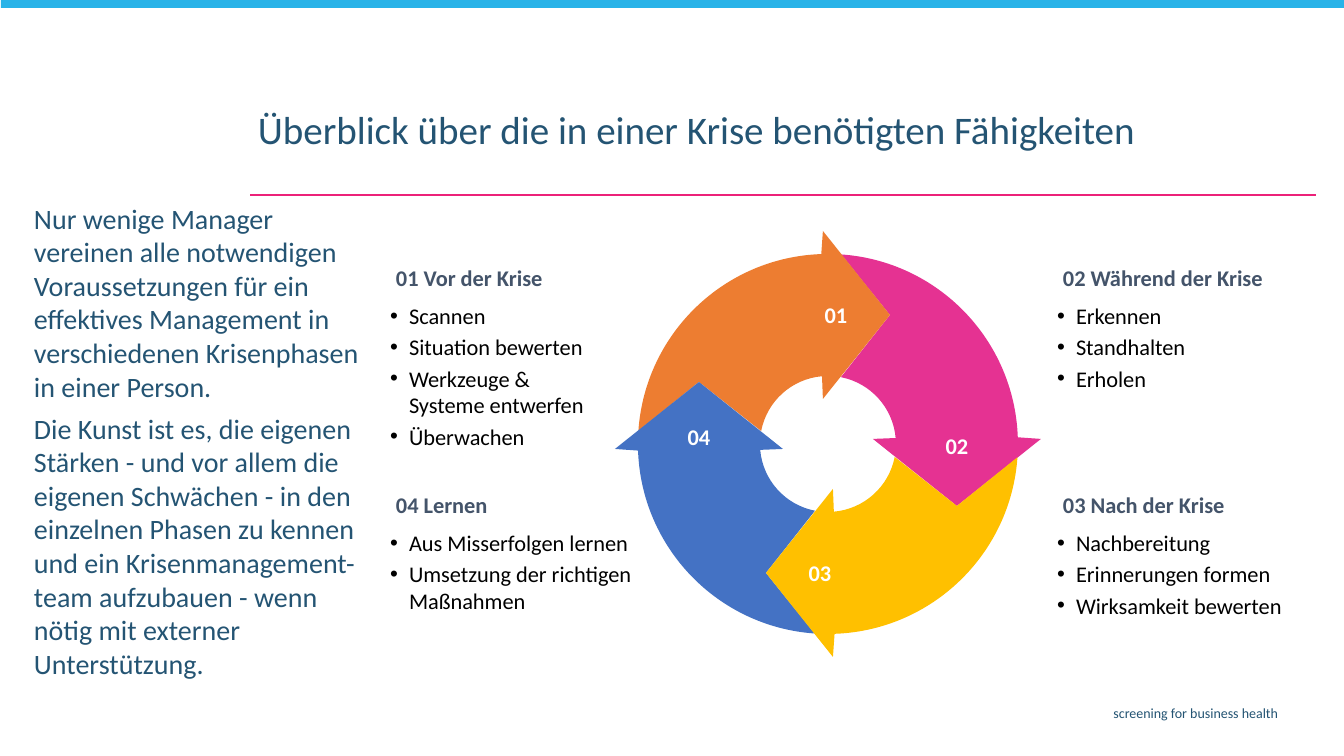
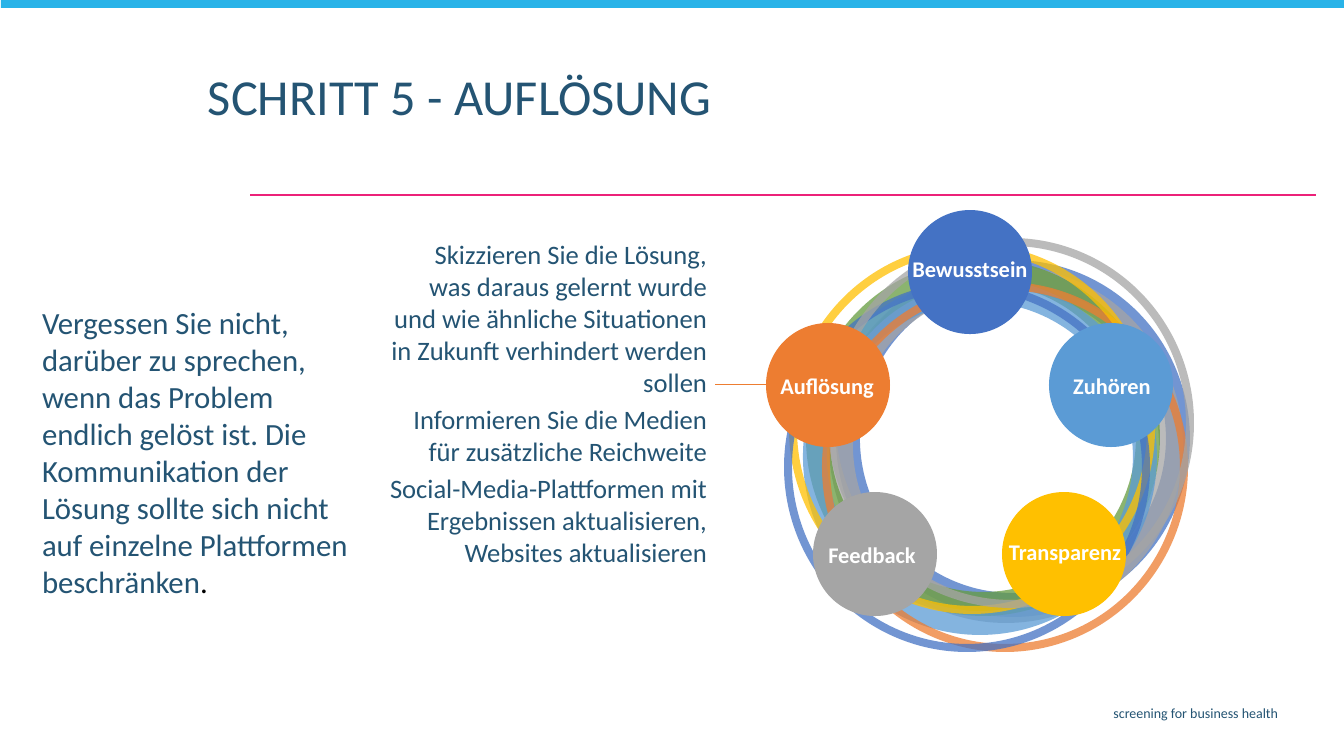
from dataclasses import dataclass
from math import cos, hypot, atan2, radians, sin, tan

from lxml import etree
from pptx import Presentation
from pptx.dml.color import RGBColor
from pptx.enum.shapes import MSO_CONNECTOR, MSO_SHAPE
from pptx.enum.text import MSO_ANCHOR as Anchor, MSO_AUTO_SIZE, PP_ALIGN as Align
from pptx.oxml.ns import qn
from pptx.util import Emu, Pt

# Shared scale, font and colours
SLIDE_W, SLIDE_H = 1344, 756
EMU_PER_PX = 12192000 / SLIDE_W
FONT = "Calibri"
NAVY, SLATE, BLACK, WHITE = "245473", "44546A", "000000", "FFFFFF"
CYAN, MAGENTA, PINK = "29B3E8", "EC2179", "E53292"
ORANGE, BLUE, YELLOW = "ED7D31", "4472C4", "FFC000"
GREY, GREEN, SKY = "A5A5A5", "659C40", "5B9BD5"

Point = tuple[float, float]


@dataclass(frozen=True)
class Box:
    left: int
    top: int
    width: int
    height: int


@dataclass(frozen=True)
class Run:
    text: str
    size: float
    color: str = NAVY
    bold: bool = False


@dataclass(frozen=True)
class Layout:
    align: Align = Align.LEFT
    anchor: Anchor = Anchor.TOP
    inset: tuple[int, int] = (10, 5)
    space_before: float = 0
    line_spacing: float = 1.0
    indent: int = 0


@dataclass(frozen=True)
class Phase:
    number: str
    name: str
    skills: tuple[str, ...]
    color: str
    turns: int
    column: int
    row: int
    list_width: int
    number_center: tuple[int, int]


@dataclass(frozen=True)
class Ring:
    left: int
    top: int
    color: str
    thick: bool


@dataclass(frozen=True)
class Step:
    name: str
    left: int
    top: int
    color: str
    label_center: tuple[int, int]


PHASES = (
    Phase("02", "Während der Krise", ("Erkennen", "Standhalten", "Erholen"),
          PINK, 0, 1, 0, 216, (957, 445)),
    Phase("01", "Vor der Krise",
          ("Scannen", "Situation bewerten", "Werkzeuge & Systeme entwerfen", "Überwachen"),
          ORANGE, 3, 0, 0, 216, (836, 314)),
    Phase("04", "Lernen",
          ("Aus Misserfolgen lernen", "Umsetzung der richtigen Maßnahmen"),
          BLUE, 2, 0, 1, 251, (699, 436)),
    Phase("03", "Nach der Krise",
          ("Nachbereitung", "Erinnerungen formen", "Wirksamkeit bewerten"),
          YELLOW, 1, 1, 1, 251, (820, 572)),
)

RINGS = (
    Ring(836, 260, BLUE, True),
    Ring(829, 266, GREY, True),
    Ring(806, 259, GREEN, True),
    Ring(803, 278, SKY, True),
    Ring(822, 282, ORANGE, False),
    Ring(789, 244, YELLOW, False),
    Ring(784, 282, BLUE, False),
    Ring(828, 238, GREY, False),
)

STEPS = (
    Step("Transparenz", 1002, 492, YELLOW, (1065, 551)),
    Step("Feedback", 813, 492, GREY, (872, 554)),
    Step("Auflösung", 766, 323, ORANGE, (827, 385)),
    Step("Zuhören", 1049, 323, SKY, (1112, 385)),
    Step("Bewusstsein", 908, 210, BLUE, (970, 268)),
)


# Drawing helpers
def px(length: float) -> Emu:
    return Emu(round(length * EMU_PER_PX))


def rgb(color: str) -> RGBColor:
    return RGBColor.from_string(color)


def place(box: Box) -> tuple[Emu, Emu, Emu, Emu]:
    return px(box.left), px(box.top), px(box.width), px(box.height)


def paint(shape, color: str, opacity: int = 100) -> None:
    shape.shadow.inherit = False
    shape.fill.solid()
    shape.fill.fore_color.rgb = rgb(color)
    shape.line.fill.background()
    if opacity < 100:
        fill_color = shape.fill._xPr.find(qn("a:solidFill"))[0]
        etree.SubElement(fill_color, qn("a:alpha"), val=str(opacity * 1000))


def add_bullet(paragraph, indent: int) -> None:
    properties = paragraph._p.get_or_add_pPr()
    properties.set("marL", str(px(indent)))
    properties.set("indent", str(-px(indent)))
    etree.SubElement(properties, qn("a:buFont"), typeface="Arial")
    etree.SubElement(properties, qn("a:buChar"), char="•")


def write(frame, paragraphs: list[list[Run]], layout: Layout) -> None:
    frame.auto_size = MSO_AUTO_SIZE.NONE
    frame.word_wrap = True
    frame.vertical_anchor = layout.anchor
    frame.margin_left = frame.margin_right = px(layout.inset[0])
    frame.margin_top = frame.margin_bottom = px(layout.inset[1])
    for index, runs in enumerate(paragraphs):
        paragraph = frame.add_paragraph() if index else frame.paragraphs[0]
        if layout.indent:
            add_bullet(paragraph, layout.indent)
        paragraph.alignment = layout.align
        paragraph.line_spacing = layout.line_spacing
        paragraph.space_before = Pt(layout.space_before if index else 0)
        for run in runs:
            part = paragraph.add_run()
            part.text = run.text
            part.font.name = FONT
            part.font.size = Pt(run.size)
            part.font.bold = run.bold
            part.font.color.rgb = rgb(run.color)


def add_text(slide, box: Box, paragraphs: list[list[Run]], layout: Layout = Layout()):
    text_box = slide.shapes.add_textbox(*place(box))
    write(text_box.text_frame, paragraphs, layout)
    return text_box


def add_label(slide, center: tuple[int, int], text: str) -> None:
    """White bold text centred on a point of the diagram."""
    width, height = 136, 37
    box = Box(center[0] - width // 2, center[1] - height // 2, width, height)
    add_text(slide, box, [[Run(text, 16, WHITE, True)]],
             Layout(Align.CENTER, Anchor.MIDDLE, inset=(0, 5)))


def add_line(slide, start: tuple[int, int], end: tuple[int, int], color: str, width: float):
    line = slide.shapes.add_connector(
        MSO_CONNECTOR.STRAIGHT, *(px(value) for value in start + end))
    line.line.color.rgb = rgb(color)
    line.line.width = Pt(width)
    etree.SubElement(line._element.spPr, qn("a:effectLst"))
    return line


def set_title(slide, box: Box, text: str, size: float, line_spacing: float = 1.0) -> None:
    title = slide.shapes.title
    title.left, title.top, title.width, title.height = place(box)
    write(title.text_frame, [[Run(text, size)]], Layout(line_spacing=line_spacing))


# Band, rule and footer live on the layout
def furnish_layout(slide) -> None:
    layout = slide.slide_layout
    for placeholder in list(layout.placeholders):
        if placeholder.placeholder_format.idx:
            layout.shapes.element.remove(placeholder.element)
    title_rule = add_line(slide, (1316, 195), (250, 195), MAGENTA, 1.5)
    top_band = slide.shapes.add_shape(MSO_SHAPE.RECTANGLE, *place(Box(1, -2, 1344, 10)))
    paint(top_band, CYAN)
    footer = add_text(slide, Box(368, 699, 920, 29),
                      [[Run("screening for business health", 10)]],
                      Layout(align=Align.RIGHT))
    for part in (title_rule, top_band, footer):
        layout.shapes.element.append(part.element)


# Slide 1: wheel of four arrows
WHEEL_X, WHEEL_Y = 828, 444
OUTER, INNER = 190, 68
OUTER_ARC, INNER_ARC = (-86, -2), (-5, -79)


def polar(radius: float, degrees: float) -> Point:
    return radius * cos(radians(degrees)), radius * sin(radians(degrees))


def on_wheel(point: Point, turns: int) -> tuple[Emu, Emu]:
    """Slide position of a point after quarter turns about the wheel's centre."""
    angle = atan2(point[1], point[0]) + radians(90 * turns)
    distance = hypot(*point)
    return px(WHEEL_X + distance * cos(angle)), px(WHEEL_Y + distance * sin(angle))


def arc_controls(radius: int, start: int, end: int) -> list[Point]:
    """The two Bézier control points of an arc."""
    reach = 4 / 3 * tan(radians(end - start) / 4)
    (x1, y1), (x2, y2) = polar(radius, start), polar(radius, end)
    return [(x1 - reach * y1, y1 + reach * x1), (x2 + reach * y2, y2 - reach * x2)]


def bend(segment, shape, controls: list[tuple[Emu, Emu]]) -> None:
    """Turn a straight segment of a freeform into a curve."""
    segment.tag = qn("a:cubicBezTo")
    for index, (x, y) in enumerate(controls):
        point = etree.Element(qn("a:pt"), x=str(x - shape.left), y=str(y - shape.top))
        segment.insert(index, point)


def add_arrow(slide, phase: Phase) -> None:
    head_y, tip, notch = -5, (129, 62), (62, -129)
    corners = [
        polar(OUTER, OUTER_ARC[0]), polar(OUTER, OUTER_ARC[1]),
        (213, head_y), tip, (45, head_y),
        polar(INNER, INNER_ARC[0]), polar(INNER, INNER_ARC[1]), notch,
    ]
    points = [on_wheel(corner, phase.turns) for corner in corners]
    builder = slide.shapes.build_freeform(*points[0])
    builder.add_line_segments(points[1:], close=True)
    arrow = builder.convert_to_shape()
    segments = list(arrow._element.iter(qn("a:lnTo")))
    for index, radius, span in ((0, OUTER, OUTER_ARC), (5, INNER, INNER_ARC)):
        controls = [on_wheel(point, phase.turns) for point in arc_controls(radius, *span)]
        bend(segments[index], arrow, controls)
    paint(arrow, phase.color)


def add_phase_texts(slide, phase: Phase) -> None:
    add_label(slide, phase.number_center, phase.number)
    left, top = 386 + 667 * phase.column, 259 + 227 * phase.row
    add_text(slide, Box(left, top, 230, 37),
             [[Run(f"{phase.number} {phase.name}", 16, SLATE, True)]],
             Layout(anchor=Anchor.BOTTOM))
    add_text(slide, Box(left, top + 41, phase.list_width, 34 * len(phase.skills)),
             [[Run(skill, 16, BLACK)] for skill in phase.skills],
             Layout(inset=(4, 2), space_before=3.2, indent=19))


def build_skills(slide) -> None:
    set_title(slide, Box(248, 113, 976, 77),
              "Überblick über die in einer Krise benötigten Fähigkeiten", 27.9, 0.7)
    add_text(slide, Box(25, 197, 352, 535), [
        [Run("Nur wenige Manager vereinen alle notwendigen Voraussetzungen für ein "
             "effektives Management in verschiedenen Krisenphasen in einer Person.", 20)],
        [Run("Die Kunst ist es, die eigenen Stärken - und vor allem die eigenen "
             "Schwächen - in den einzelnen Phasen zu kennen und ein Krisenmanagement-team "
             "aufzubauen - wenn nötig mit externer Unterstützung.", 20)],
    ], Layout(inset=(9, 4), space_before=6))
    for draw in (add_arrow, add_phase_texts):
        for phase in PHASES:
            draw(slide, phase)


# Slide 2: five steps on interlaced rings
def add_ring(slide, ring: Ring) -> None:
    width, height, band = (354, 357, 24) if ring.thick else (366, 370, 8)
    donut = slide.shapes.add_shape(
        MSO_SHAPE.DONUT, *place(Box(ring.left, ring.top, width, height)))
    donut.adjustments[0] = band / width
    paint(donut, ring.color, opacity=75)


def add_step(slide, step: Step) -> None:
    circle = slide.shapes.add_shape(
        MSO_SHAPE.OVAL, *place(Box(step.left, step.top, 124, 124)))
    paint(circle, step.color)
    add_label(slide, step.label_center, step.name)


def build_resolution(slide) -> None:
    set_title(slide, Box(198, 60, 1002, 77), "SCHRITT 5 - AUFLÖSUNG", 36)
    add_text(slide, Box(33, 300, 325, 270), [[
        Run("Vergessen Sie nicht, darüber zu sprechen, wenn das Problem endlich gelöst "
            "ist. Die Kommunikation der Lösung sollte sich nicht auf einzelne "
            "Plattformen beschränken", 22),
        Run(".", 22, BLACK),
    ]], Layout(inset=(9, 4)))
    advice = (
        "Skizzieren Sie die Lösung, was daraus gelernt wurde und wie ähnliche "
        "Situationen in Zukunft verhindert werden sollen",
        "Informieren Sie die Medien für zusätzliche Reichweite",
        "Social-Media-Plattformen mit Ergebnissen aktualisieren, Websites aktualisieren",
    )
    add_text(slide, Box(386, 236, 325, 403), [[Run(text, 19)] for text in advice],
             Layout(Align.RIGHT, inset=(4, 2), space_before=3.8))
    add_line(slide, (772, 384), (715, 384), ORANGE, 0.5)
    for ring in RINGS:
        add_ring(slide, ring)
    for step in STEPS:
        add_step(slide, step)


def main() -> None:
    deck = Presentation()
    deck.slide_width, deck.slide_height = px(SLIDE_W), px(SLIDE_H)
    title_only = deck.slide_layouts[5]
    skills = deck.slides.add_slide(title_only)
    furnish_layout(skills)
    build_skills(skills)
    build_resolution(deck.slides.add_slide(title_only))
    deck.save("out.pptx")


if __name__ == "__main__":
    main()
